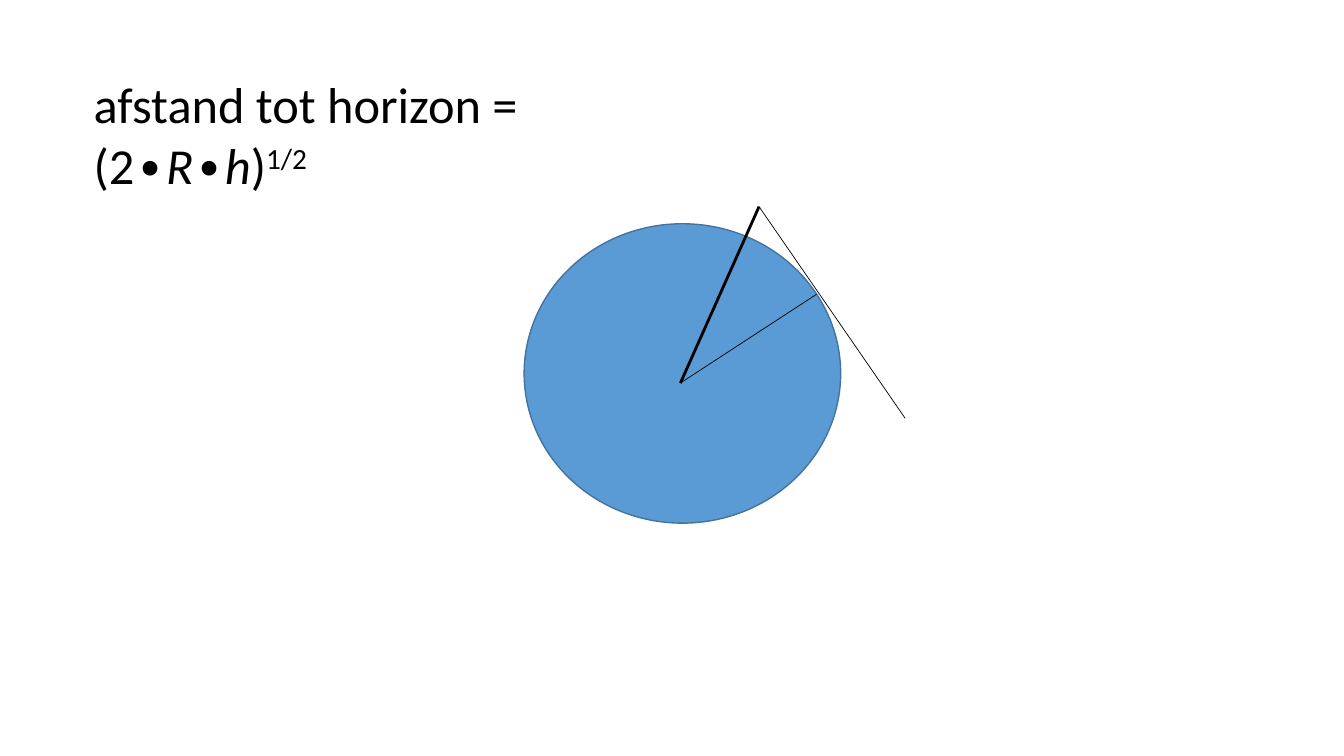
"""Draw the distance to the horizon as a formula beside a circle with its tangent."""

from dataclasses import dataclass, field

from pptx import Presentation
from pptx.dml.color import RGBColor
from pptx.enum.shapes import MSO_CONNECTOR, MSO_SHAPE
from pptx.enum.text import MSO_ANCHOR, MSO_AUTO_SIZE
from pptx.oxml.ns import qn
from pptx.slide import Slide
from pptx.util import Inches, Length, Pt

OVAL = MSO_SHAPE.OVAL
STRAIGHT = MSO_CONNECTOR.STRAIGHT
TOP = MSO_ANCHOR.TOP
GROW = MSO_AUTO_SIZE.SHAPE_TO_FIT_TEXT

BLACK = RGBColor(0x00, 0x00, 0x00)
BLUE = RGBColor(0x5B, 0x9B, 0xD5)
NAVY = RGBColor(0x43, 0x73, 0x9E)

CELL = 0.1
COLS, ROWS = 133.33, 75
FORMAT = {"name": "Calibri", "size": Pt(36)}
FRAME = {"word_wrap": True, "auto_size": GROW, "vertical_anchor": TOP}

Point = tuple[float, float]


@dataclass(frozen=True)
class Box:
    col: float
    row: float
    wide: float
    high: float


@dataclass(frozen=True)
class Ray:
    start: Point
    end: Point
    weight: float = 0.5


@dataclass(frozen=True)
class Part:
    text: str
    style: dict[str, bool] = field(default_factory=dict)
    raised: bool = False


CENTRE: Point = (67.5, 38)
EYE: Point = (75.3, 20.5)
TOUCH: Point = (81, 29.2)
FAR: Point = (89.8, 41.5)

EARTH = Box(52, 22.2, 31.4, 29.7)
TITLE = Box(8.3, 6.8, 65.8, 7.1)
RAYS = (Ray(CENTRE, EYE, 2), Ray(EYE, FAR), Ray(CENTRE, TOUCH))
PARTS = (
    Part("afstand tot horizon = (2∙"),
    Part("R∙h", {"italic": True}),
    Part(")"),
    Part("1/2", raised=True),
)


def span(*cells: float) -> list[Length]:
    return [Inches(cell * CELL) for cell in cells]


def place(box: Box) -> list[Length]:
    return span(box.col, box.row, box.wide, box.high)


def draw_earth(slide: Slide, box: Box) -> None:
    earth = slide.shapes.add_shape(OVAL, *place(box))
    earth.shadow.inherit = False
    earth.fill.solid()
    earth.fill.fore_color.rgb = BLUE
    earth.line.color.rgb = NAVY
    earth.line.width = Pt(1)


def draw_ray(slide: Slide, ray: Ray) -> None:
    line = slide.shapes.add_connector(STRAIGHT, *span(*ray.start, *ray.end))
    line.line.color.rgb = BLACK
    line.line.width = Pt(ray.weight)
    props = line._element.spPr
    props.append(props.makeelement(qn("a:effectLst"), {}))


def write_title(slide: Slide, box: Box, parts: tuple[Part, ...]) -> None:
    frame = slide.shapes.add_textbox(*place(box)).text_frame
    for name, value in FRAME.items():
        setattr(frame, name, value)
    for part in parts:
        run = frame.paragraphs[0].add_run()
        run.text = part.text
        for name, value in (FORMAT | part.style).items():
            setattr(run.font, name, value)
        run.font.color.rgb = BLACK
        if part.raised:
            run._r.get_or_add_rPr().set("baseline", "30000")


def main() -> None:
    deck = Presentation()
    deck.slide_width, deck.slide_height = span(COLS, ROWS)
    slide = deck.slides.add_slide(deck.slide_layouts[6])
    draw_earth(slide, EARTH)
    for ray in RAYS:
        draw_ray(slide, ray)
    write_title(slide, TITLE, PARTS)
    deck.save("out.pptx")


if __name__ == "__main__":
    main()
